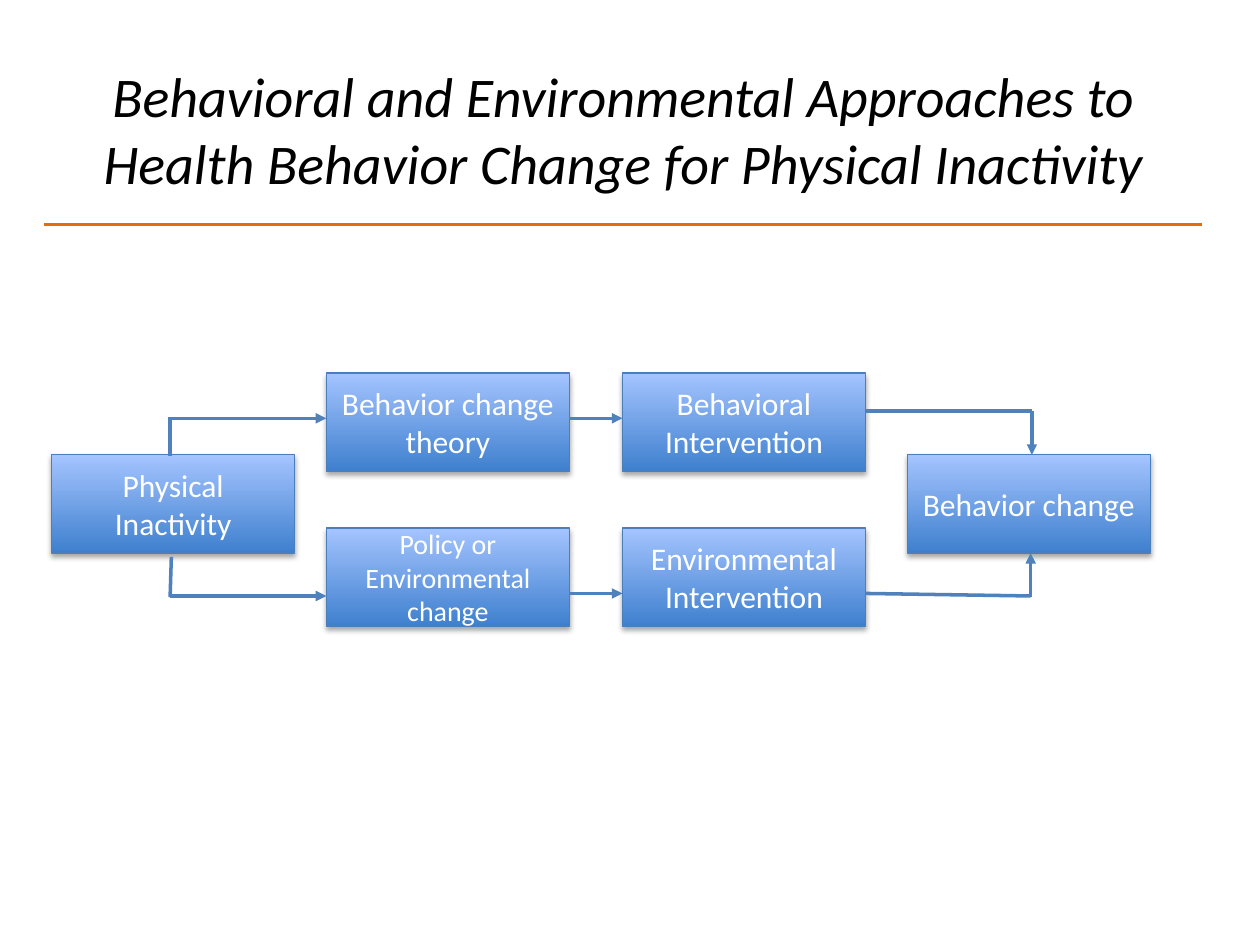
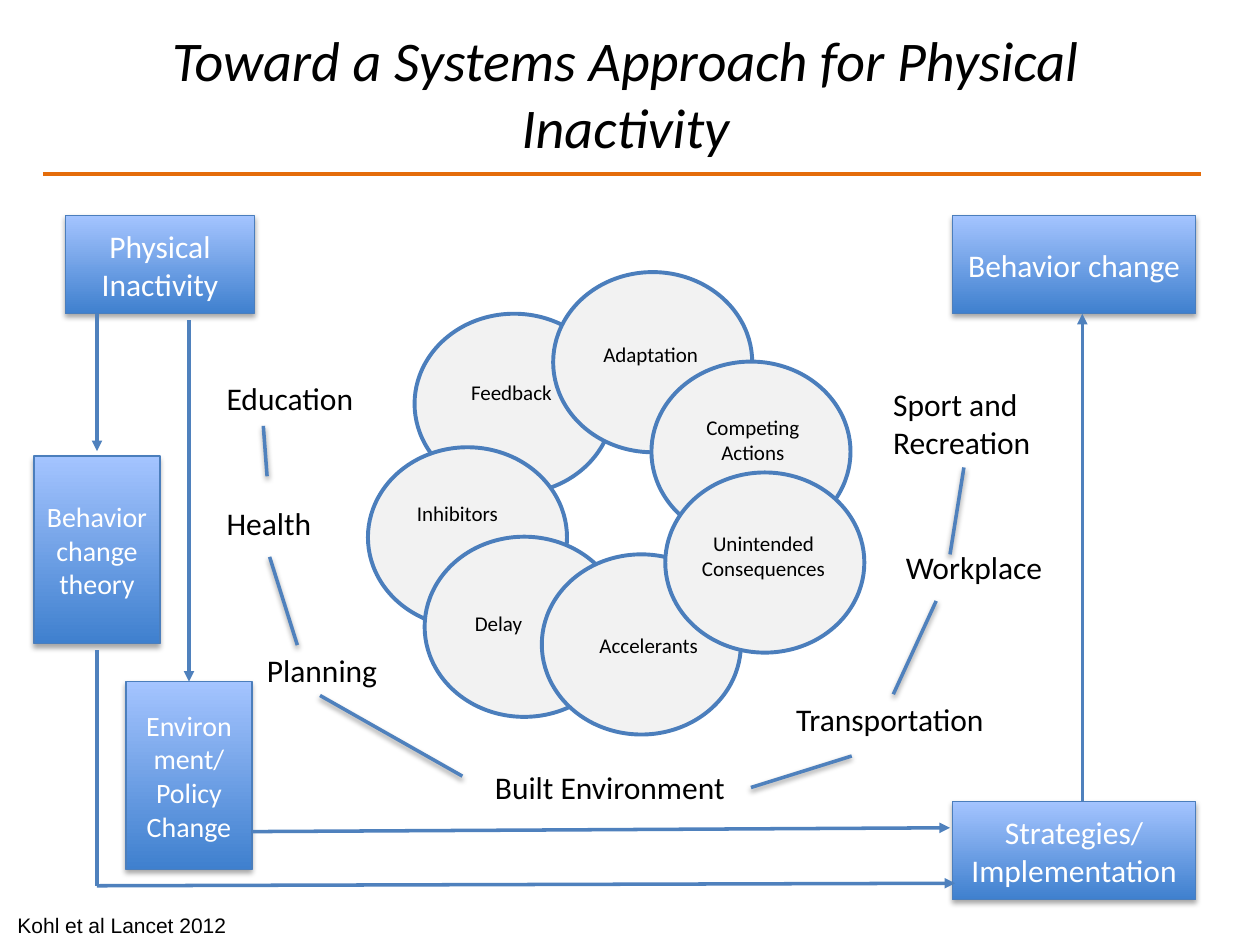
from lxml import etree
from pptx import Presentation
from pptx.dml.color import RGBColor
from pptx.enum.shapes import MSO_CONNECTOR, MSO_SHAPE
from pptx.enum.text import MSO_ANCHOR, MSO_AUTO_SIZE, PP_ALIGN
from pptx.oxml.ns import qn
from pptx.util import Inches, Pt

RECT, OVAL = MSO_SHAPE.RECTANGLE, MSO_SHAPE.OVAL
LINE = MSO_CONNECTOR.STRAIGHT
LEFT, CENTER = PP_ALIGN.LEFT, PP_ALIGN.CENTER
TOP, MIDDLE = MSO_ANCHOR.TOP, MSO_ANCHOR.MIDDLE
GROW = MSO_AUTO_SIZE.SHAPE_TO_FIT_TEXT

COLORS = {
    "black": "000000", "white": "FFFFFF", "rule": "E46C0A",
    "dark": "3F80CE", "light": "A4C4FF", "edge": "4B7EBC",
    "link": "4F81BD", "pale": "F2F2F2",
}
WIDE, TALL = (1.93, 0.78), (1, 1.49)  # box sizes


def rgb(name):
    return RGBColor.from_string(COLORS[name])


def write(frame, text, size=18, color="black", font="Calibri",
          italic=False, align=LEFT, anchor=TOP, wrap=True):
    """Fill a text frame, one paragraph per line of text."""
    frame.word_wrap = wrap
    frame.vertical_anchor = anchor
    frame.text = text
    for para in frame.paragraphs:
        para.alignment = align
        face = para.font
        face.name, face.size, face.italic = font, Pt(size), italic
        face.color.rgb = rgb(color)


def shade(item, alpha, blur, drop):
    """Add a soft shadow that falls straight down."""
    props = item._element.spPr
    effects = props.find(qn("a:effectLst"))
    outer = etree.SubElement(
        effects, qn("a:outerShdw"), blurRad=str(Pt(blur)),
        dist=str(Pt(drop)), dir="5400000", rotWithShape="0")
    tint = etree.SubElement(outer, qn("a:srgbClr"), val=COLORS["black"])
    etree.SubElement(tint, qn("a:alpha"), val=str(alpha * 1000))


class Deck:
    def __init__(self):
        self.show = Presentation()
        self.show.slide_width = Inches(10)
        self.show.slide_height = Inches(7.5)
        self.slide = None

    def page(self, title, spot, width, rule):
        """Start a slide with its title and the orange rule."""
        self.slide = self.show.slides.add_slide(self.show.slide_layouts[6])
        self.label(title, *spot, width, 1.18, size=32, italic=True,
                   align=CENTER)
        left, top = rule
        self.line((left, top), (left + 9.19, top), color="rule")

    def shape(self, kind, x, y, size, weight):
        item = self.slide.shapes.add_shape(
            kind, Inches(x), Inches(y), *map(Inches, size))
        item.line.color.rgb = rgb("edge")
        item.line.width = Pt(weight)
        item.shadow.inherit = False
        return item

    def box(self, text, x, y, size=WIDE, points=18):
        item = self.shape(RECT, x, y, size, 0.75)
        item.fill.gradient()
        item.fill.gradient_angle = 90
        for stop, name in zip(item.fill.gradient_stops, ("dark", "light")):
            stop.color.rgb = rgb(name)
        shade(item, 35, 3.1, 1.8)
        write(item.text_frame, text, size=points, color="white",
              align=CENTER, anchor=MIDDLE)

    def oval(self, x, y):
        item = self.shape(OVAL, x, y, (1.58, 1.43), 2.25)
        item.fill.solid()
        item.fill.fore_color.rgb = rgb("pale")

    def label(self, text, x, y, width, height, **style):
        item = self.slide.shapes.add_textbox(
            *map(Inches, (x, y, width, height)))
        write(item.text_frame, text, **style)
        item.text_frame.auto_size = GROW

    def line(self, start, end, color="link", arrow=False, shadow=False):
        item = self.slide.shapes.add_connector(
            LINE, *map(Inches, (*start, *end)))
        item.line.color.rgb = rgb(color)
        item.line.width = Pt(2)
        if arrow:
            etree.SubElement(item.line._get_or_add_ln(), qn("a:tailEnd"),
                             type="triangle")
        etree.SubElement(item._element.spPr, qn("a:effectLst"))
        if shadow:
            shade(item, 38, 3.1, 1.6)

    def arrow(self, start, end):
        self.line(start, end, arrow=True)


def paths(deck):
    deck.page("Behavioral and Environmental Approaches to "
              "Health Behavior Change for Physical Inactivity",
              (0.15, 0.44), 9.6, (0.35, 1.78))

    # Boxes: the two ends, then the upper and lower paths
    deck.box("Physical Inactivity", 0.41, 3.61)
    deck.box("Behavior change", 7.2, 3.61)
    deck.box("Behavior change theory", 2.59, 2.96)
    deck.box("Behavioral Intervention", 4.94, 2.96)
    deck.box("Policy or Environmental change", 2.59, 4.19, points=16)
    deck.box("Environmental Intervention", 4.94, 4.19)

    # Upper path
    deck.line((1.35, 3.62), (1.35, 3.31))
    deck.arrow((1.36, 3.32), (2.59, 3.32))
    deck.arrow((4.52, 3.32), (4.94, 3.32))
    deck.line((6.87, 3.26), (8.19, 3.26))
    deck.arrow((8.19, 3.26), (8.19, 3.61))

    # Lower path
    deck.line((1.36, 4.42), (1.35, 4.74))
    deck.arrow((1.35, 4.73), (2.59, 4.73))
    deck.arrow((4.52, 4.71), (4.94, 4.71))
    deck.line((6.87, 4.71), (8.18, 4.73))
    deck.arrow((8.18, 4.74), (8.18, 4.39))


def system(deck):
    deck.page("Toward a Systems Approach for Physical Inactivity",
              (0.44, 0.15), 9.05, (0.34, 1.38))

    # Ring of ovals, from back to front
    for spot in ((3.29, 2.49), (2.92, 3.55), (3.37, 4.26), (4.3, 4.4),
                 (4.39, 2.16), (5.17, 2.87), (5.28, 3.75)):
        deck.oval(*spot)
    for text, x, y, width in (
            ("Feedback", 3.64, 2.96, 0.85),
            ("Inhibitors", 3.21, 3.92, 0.86),
            ("Delay", 3.67, 4.8, 0.59),
            ("Accelerants", 4.66, 4.97, 1),
            ("Adaptation", 4.69, 2.66, 0.96),
            ("Competing\nActions", 5.5, 3.24, 0.95),
            ("Unintended\nConsequences", 5.46, 4.16, 1.2)):
        pair = "\n" in text
        deck.label(text, x, y, width, 0.5 if pair else 0.3, size=12,
                   align=CENTER if pair else LEFT, wrap=False)

    # Sectors and the links between them
    for text, x, y, width in (
            ("Education", 1.7, 2.96, 1.22),
            ("Health", 1.7, 3.95, 0.88),
            ("Planning", 2.02, 5.12, 1.09),
            ("Built Environment", 3.83, 6.05, 2.06),
            ("Transportation", 6.22, 5.51, 1.73),
            ("Workplace", 7.09, 4.3, 1.31)):
        deck.label(text, x, y, width, 0.4, wrap=False)
    deck.label("Sport and Recreation", 6.99, 3.01, 1.4, 0.71)
    for start, end in (
            ((2.09, 3.38), (2.12, 3.78)), ((2.14, 4.42), (2.36, 5.12)),
            ((2.54, 5.52), (3.67, 6.16)), ((7.65, 3.71), (7.54, 4.4)),
            ((7.43, 4.77), (7.09, 5.51)), ((6.76, 6), (5.96, 6.25))):
        deck.line(start, end, shadow=True)

    # Boxes around the ring
    deck.box("Physical Inactivity", 0.52, 1.71, (1.5, 0.78))
    deck.box("Behavior change theory", 0.27, 3.62, TALL, 16)
    deck.box("Environment/Policy Change", 1, 5.41, TALL, 16)
    deck.box("Strategies/Implementation", 7.56, 6.36)
    deck.box("Behavior change", 7.56, 1.71)

    # Flow from inactivity to change
    deck.arrow((0.77, 2.49), (0.77, 3.58))
    deck.line((0.77, 5.16), (0.77, 7.03))
    deck.arrow((0.77, 7.03), (7.58, 7.01))
    deck.arrow((1.5, 2.54), (1.5, 5.41))
    deck.arrow((2, 6.6), (7.54, 6.57))
    deck.arrow((8.59, 6.36), (8.59, 2.49))

    # Citation
    deck.label("Kohl et al Lancet 2012", 0.04, 7.19, 8.92, 0.3, size=12,
               font="Arial")


def main():
    deck = Deck()
    paths(deck)
    system(deck)
    deck.show.save("out.pptx")


if __name__ == "__main__":
    main()
